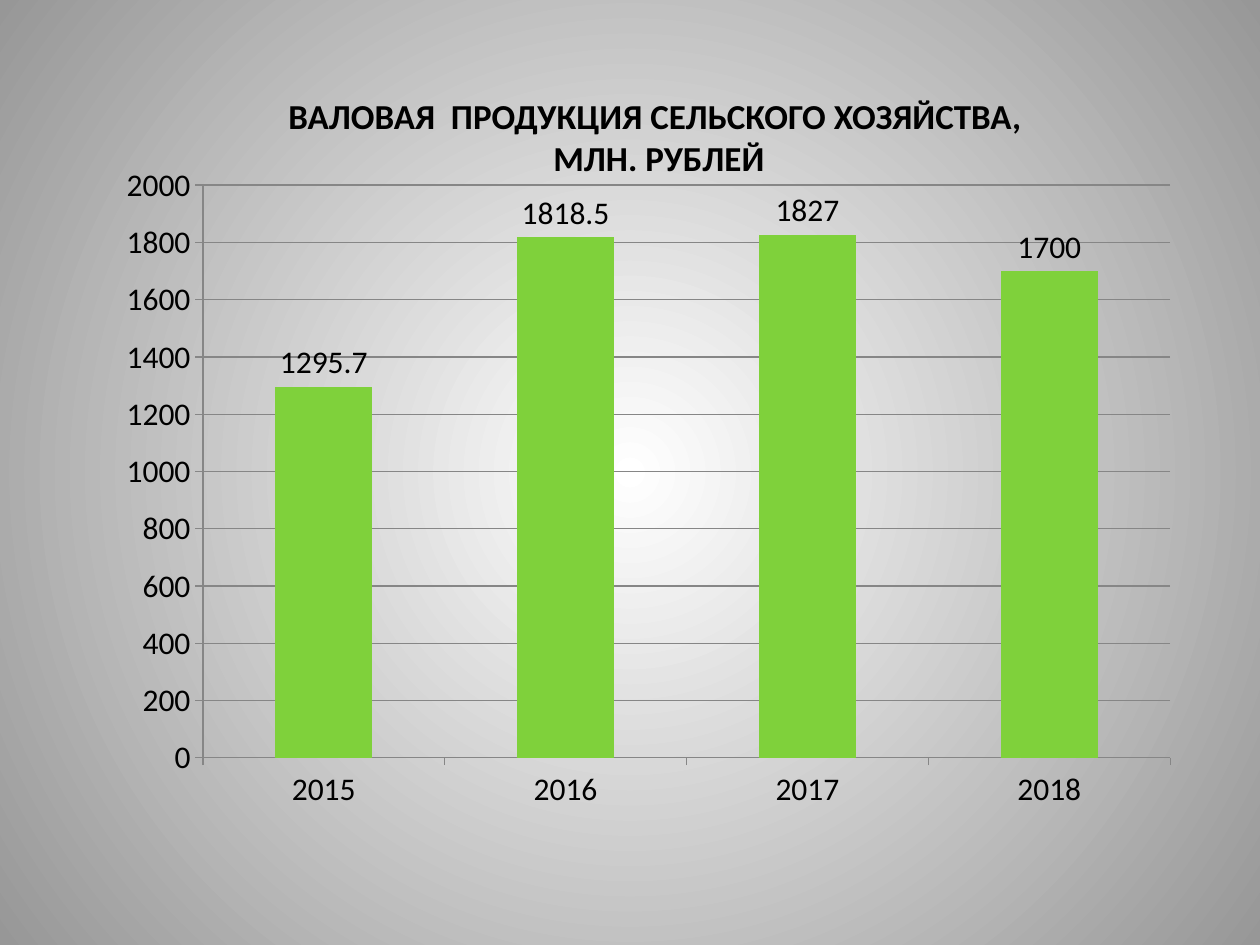
import pptx
import pptx.chart.data
import pptx.dml.color
import pptx.enum.chart
import pptx.enum.text
import pptx.oxml
import pptx.oxml.ns
import pptx.util

W, H = 10, 7.5
FONT = "Calibri"
COLORS = {"text": "000000", "bar": "7FD13B", "line": "868686",
          "center": "FFFFFF", "edge": "979797"}
OUTPUT = {"2015": 1295.7, "2016": 1818.5, "2017": 1827, "2018": 1700}
TITLE = ["ВАЛОВАЯ  ПРОДУКЦИЯ СЕЛЬСКОГО ХОЗЯЙСТВА, ", "МЛН. РУБЛЕЙ"]
PLOT = {"x": 0.127, "y": 0.068, "w": 0.855, "h": 0.808}


def rgb(name):
    return pptx.dml.color.RGBColor.from_string(COLORS[name])


def box(x, y, w, h):
    """Turn shares of the slide's size into lengths."""
    return [pptx.util.Inches(v) for v in (x * W, y * H, w * W, h * H)]


def set_attrs(obj, values):
    for name, value in values.items():
        setattr(obj, name, value)


def set_font(font, size, bold=False):
    set_attrs(font, {"name": FONT, "size": pptx.util.Pt(size), "bold": bold})
    font.color.rgb = rgb("text")


def add_background(s):
    """Radial gradient, light in the middle."""
    fill = s.background.fill
    fill.gradient()
    for stop, (name, pos) in zip(fill.gradient_stops, (("center", 0), ("edge", 1))):
        stop.color.rgb = rgb(name)
        stop.position = pos
    grad = s.background._cSld.find(".//" + pptx.oxml.ns.qn("a:gradFill"))
    lin = grad.find(pptx.oxml.ns.qn("a:lin"))
    radial = pptx.oxml.parse_xml(
        f'<a:path {pptx.oxml.ns.nsdecls("a")} path="circle">'
        '<a:fillToRect l="50000" t="50000" r="50000" b="50000"/></a:path>')
    grad.replace(lin, radial)


def place_plot(chart):
    """Fix the inner plot area as shares of the chart frame."""
    area = chart._chartSpace.chart.plotArea
    for old in area.findall(pptx.oxml.ns.qn("c:layout")):
        area.remove(old)
    modes = "".join(f'<c:{k}Mode val="edge"/>' for k in "xy")
    sizes = "".join(f'<c:{k} val="{v}"/>' for k, v in PLOT.items())
    area.insert(0, pptx.oxml.parse_xml(
        f'<c:layout {pptx.oxml.ns.nsdecls("c")}><c:manualLayout>'
        f'<c:layoutTarget val="inner"/>{modes}{sizes}'
        '</c:manualLayout></c:layout>'))


def style_line(line):
    line.color.rgb = rgb("line")
    line.width = pptx.util.Pt(0.75)


def add_column_chart(s, frame, values):
    data = pptx.chart.data.CategoryChartData()
    data.categories = list(values)
    data.add_series("Series 1", list(values.values()))
    kind = pptx.enum.chart.XL_CHART_TYPE.COLUMN_CLUSTERED
    chart = s.shapes.add_chart(kind, *box(*frame), data).chart
    set_attrs(chart, {"has_title": False, "has_legend": False})
    set_font(chart.font, 18)
    place_plot(chart)

    # Axes and gridlines
    for axis in (chart.category_axis, chart.value_axis):
        axis.major_tick_mark = pptx.enum.chart.XL_TICK_MARK.OUTSIDE
        style_line(axis.format.line)
    set_attrs(chart.value_axis, {"minimum_scale": 0, "maximum_scale": 2000,
                                 "major_unit": 200, "has_major_gridlines": True})
    style_line(chart.value_axis.major_gridlines.format.line)

    # Columns and their values
    plot = chart.plots[0]
    set_attrs(plot, {"gap_width": 150, "vary_by_categories": False,
                     "has_data_labels": True})
    set_attrs(plot.data_labels, {
        "show_value": True,
        "position": pptx.enum.chart.XL_LABEL_POSITION.OUTSIDE_END})
    set_font(plot.data_labels.font, 18)
    fill = plot.series[0].format.fill
    fill.solid()
    fill.fore_color.rgb = rgb("bar")


def add_title(s, frame, lines):
    tf = s.shapes.add_textbox(*box(*frame)).text_frame
    set_attrs(tf, {"word_wrap": True,
                   "auto_size": pptx.enum.text.MSO_AUTO_SIZE.SHAPE_TO_FIT_TEXT})
    for i, line in enumerate(lines):
        p = tf.add_paragraph() if i else tf.paragraphs[0]
        p.alignment = pptx.enum.text.PP_ALIGN.CENTER
        r = p.add_run()
        r.text = line
        set_font(r.font, 20, bold=True)


def main():
    prs = pptx.Presentation()
    set_attrs(prs, {"slide_width": pptx.util.Inches(W),
                    "slide_height": pptx.util.Inches(H)})
    s = prs.slides.add_slide(prs.slide_layouts[6])
    add_background(s)
    add_column_chart(s, (0.047, 0.145, 0.898, 0.75), OUTPUT)
    add_title(s, (0.156, 0.093, 0.734, 0.103), TITLE)
    prs.save("out.pptx")


if __name__ == "__main__":
    main()
